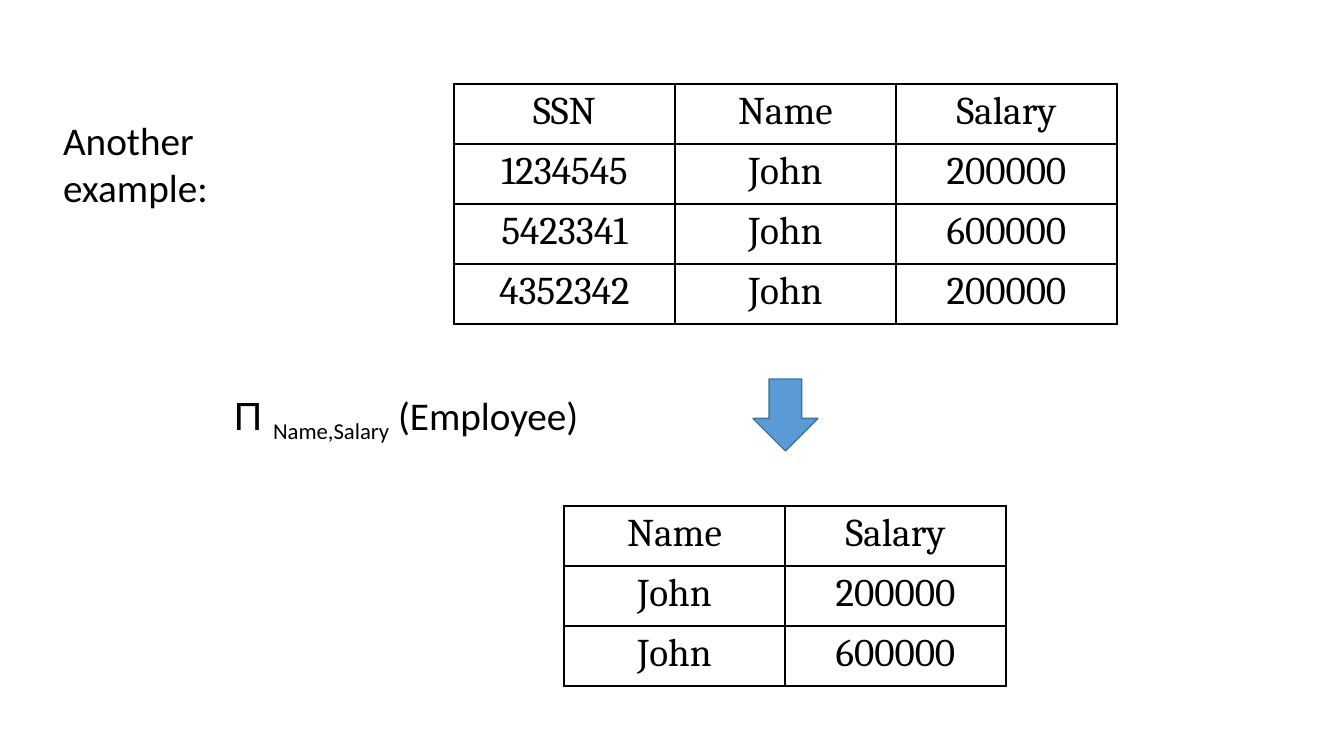
from lxml import etree
from pptx import Presentation
from pptx.dml.color import RGBColor
from pptx.enum.shapes import MSO_SHAPE
from pptx.enum.text import MSO_ANCHOR, MSO_AUTO_SIZE, PP_ALIGN
from pptx.oxml.ns import qn
from pptx.util import Emu, Pt

DOWN_ARROW = MSO_SHAPE.DOWN_ARROW
TOP = MSO_ANCHOR.TOP
NO_FIT = MSO_AUTO_SIZE.NONE
LEFT, CENTER = PP_ALIGN.LEFT, PP_ALIGN.CENTER

EMU_PER_PX = 914400 / 100.8
COLORS = {"ink": "000000", "arrow": "5B9BD5", "arrow_edge": "43739E"}


def px(length):
    return Emu(round(length * EMU_PER_PX))


def color(name):
    return RGBColor.from_string(COLORS[name])


class ProjectionSlide:
    body_font = "Calibri"
    table_font = "Cambria"
    text_size = 28
    outer_line, inner_line = 2.25, 1
    column_width, row_height = 221, 60

    def __init__(self, presentation):
        self.slide = presentation.slides.add_slide(presentation.slide_layouts[5])

    def style(self, font, name):
        font.name = name
        font.size = Pt(self.text_size)
        font.color.rgb = color("ink")

    def title(self, text, left, top, width, height):
        heading = self.slide.shapes.title
        heading.left, heading.top = px(left), px(top)
        heading.width, heading.height = px(width), px(height)
        frame = heading.text_frame
        frame.text = text
        frame.word_wrap = True
        frame.auto_size = NO_FIT
        frame.vertical_anchor = TOP
        frame.paragraphs[0].alignment = LEFT
        self.style(frame.paragraphs[0].font, self.body_font)

    def formula(self, parts, left, top, width, height):
        box = self.slide.shapes.add_textbox(px(left), px(top), px(width), px(height))
        box.text_frame.word_wrap = True
        paragraph = box.text_frame.paragraphs[0]
        for text, font_name, baseline in parts:
            run = paragraph.add_run()
            run.text = text
            self.style(run.font, font_name)
            if baseline:
                run.font._element.set("baseline", str(baseline * 1000))

    def border(self, cell, side, width):
        line = etree.SubElement(
            cell._tc.get_or_add_tcPr(), qn(f"a:ln{side}"), w=str(Pt(width))
        )
        fill = etree.SubElement(line, qn("a:solidFill"))
        etree.SubElement(fill, qn("a:srgbClr"), val=COLORS["ink"])

    def relation(self, rows, left, top):
        row_count, column_count = len(rows), len(rows[0])
        table = self.slide.shapes.add_table(
            row_count, column_count, px(left), px(top),
            px(column_count * self.column_width), px(row_count * self.row_height),
        ).table
        table.first_row = table.horz_banding = False
        for column in table.columns:
            column.width = px(self.column_width)
        for r, values in enumerate(rows):
            table.rows[r].height = px(self.row_height)
            for c, value in enumerate(values):
                cell = table.cell(r, c)
                cell.text = value
                paragraph = cell.text_frame.paragraphs[0]
                paragraph.alignment = CENTER
                self.style(paragraph.font, self.table_font)
                edges = {
                    "L": c == 0,
                    "R": c == column_count - 1,
                    "T": r == 0,
                    "B": r == row_count - 1,
                }
                for side, is_outer in edges.items():
                    self.border(cell, side, self.outer_line if is_outer else self.inner_line)
                cell.fill.background()

    def arrow(self, left, top, width, height):
        arrow = self.slide.shapes.add_shape(
            DOWN_ARROW, px(left), px(top), px(width), px(height)
        )
        arrow.shadow.inherit = False
        arrow.fill.solid()
        arrow.fill.fore_color.rgb = color("arrow")
        arrow.line.color.rgb = color("arrow_edge")
        arrow.line.width = Pt(1)


def main():
    presentation = Presentation()
    presentation.slide_width, presentation.slide_height = px(1344), px(756)
    projection = ProjectionSlide(presentation)

    projection.title("Another example:", 53, 111, 300, 104)
    projection.formula(
        [("Π ", "Arial", 0), ("Name,Salary", "Calibri", -25), (" (Employee)", "Calibri", 0)],
        224, 386, 386, 57,
    )
    employees = [
        ("SSN", "Name", "Salary"),
        ("1234545", "John", "200000"),
        ("5423341", "John", "600000"),
        ("4352342", "John", "200000"),
    ]
    projected = list(dict.fromkeys(employee[1:] for employee in employees))
    projection.relation(employees, 454, 84)
    projection.relation(projected, 564, 506)
    projection.arrow(753, 379, 65, 72)

    presentation.save("out.pptx")


if __name__ == "__main__":
    main()
